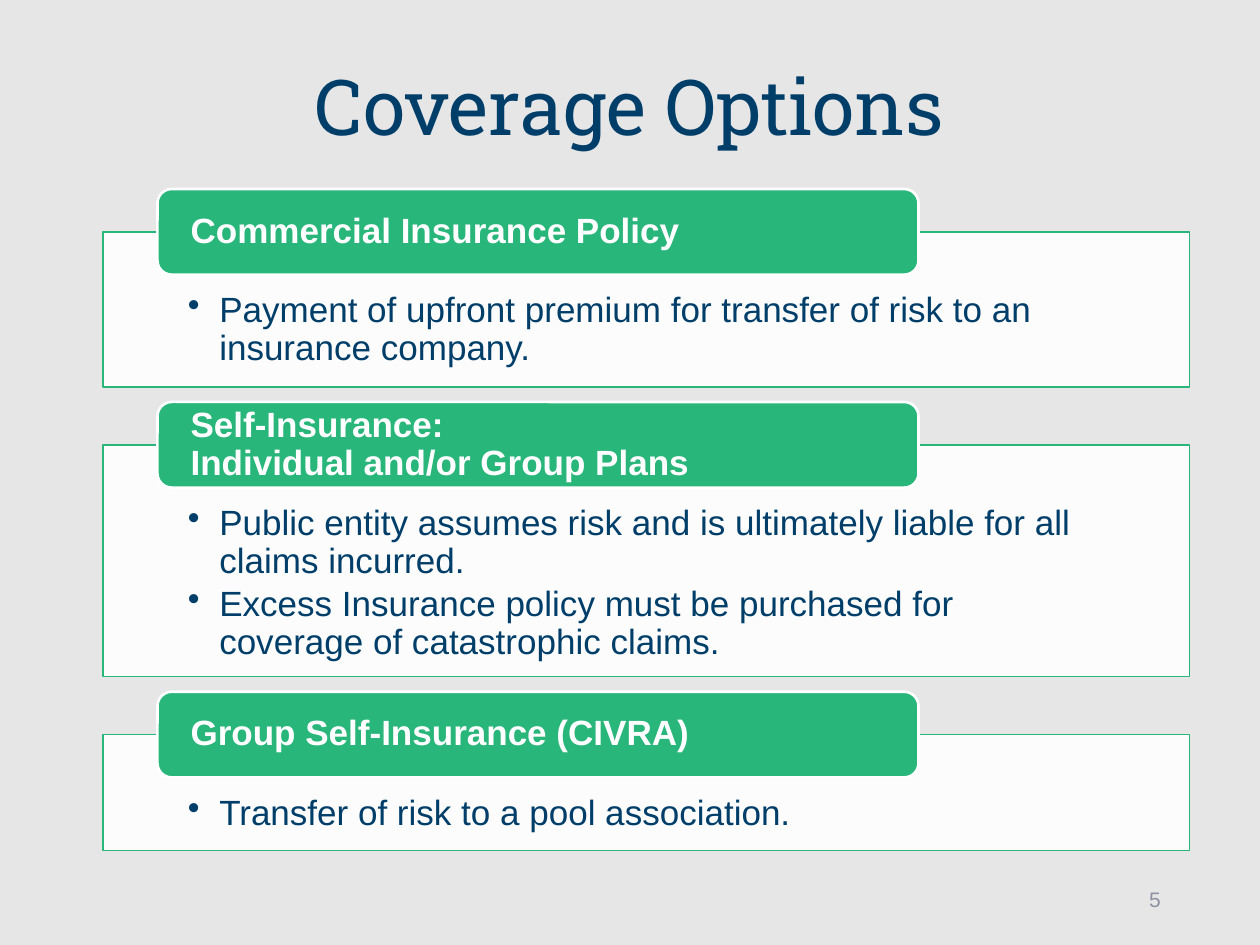
from dataclasses import dataclass

from lxml import etree
from pptx import Presentation
from pptx.dml.color import RGBColor
from pptx.enum.shapes import MSO_SHAPE
from pptx.enum.text import MSO_ANCHOR, PP_ALIGN
from pptx.oxml.ns import qn
from pptx.util import Inches, Pt

RECT = MSO_SHAPE.RECTANGLE
ROUND = MSO_SHAPE.ROUNDED_RECTANGLE
TOP = MSO_ANCHOR.TOP
MIDDLE = MSO_ANCHOR.MIDDLE
LEFT = PP_ALIGN.LEFT
CENTER = PP_ALIGN.CENTER
RIGHT = PP_ALIGN.RIGHT


@dataclass(frozen=True)
class Theme:
    back: str = "E7E6E6"
    navy: str = "003E6A"
    green: str = "28B67A"
    white: str = "FFFFFF"
    gray: str = "8C92A1"
    head: str = "Roboto Slab"
    body: str = "Arial"
    big: int = 44
    mid: int = 20
    small: int = 12


class Deck:
    def __init__(self, theme):
        self.theme = theme
        self.file = Presentation()
        self.file.slide_width = Inches(10)
        self.file.slide_height = Inches(7.5)
        self.slide = self.file.slides.add_slide(self.file.slide_layouts[5])
        fill = self.slide.background.fill
        fill.solid()
        fill.fore_color.rgb = RGBColor.from_string(theme.back)

    def frame(self, shape, anchor, pads):
        frame = shape.text_frame
        frame.word_wrap = True
        frame.vertical_anchor = anchor
        frame.margin_left, frame.margin_top, frame.margin_right, frame.margin_bottom = map(Inches, pads)
        return frame

    def label(self, para, text, size, color, align=LEFT, font=None, bold=False):
        para.alignment = align
        para.line_spacing = 0.9
        for i, line in enumerate(text.split("\n")):
            if i:
                para.add_line_break()
            run = para.add_run()
            run.text = line
            run.font.name = font or self.theme.body
            run.font.size = Pt(size)
            run.font.bold = bold
            run.font.color.rgb = RGBColor.from_string(color)

    def title(self, text):
        shape = self.slide.shapes.title
        shape.left, shape.top, shape.width, shape.height = map(Inches, (0.69, 0.15, 8.62, 1.45))
        frame = self.frame(shape, MIDDLE, (0.1, 0.05, 0.1, 0.05))
        self.label(frame.paragraphs[0], text, self.theme.big, self.theme.navy, CENTER, self.theme.head)

    def number(self, text):
        box = self.slide.shapes.add_textbox(*map(Inches, (7.06, 6.95, 2.25, 0.4)))
        frame = self.frame(box, MIDDLE, (0.1, 0.05, 0.1, 0.05))
        self.label(frame.paragraphs[0], text, self.theme.small, self.theme.gray, RIGHT)

    def shape(self, kind, place, fill, line, width):
        shape = self.slide.shapes.add_shape(kind, *map(Inches, place))
        shape.shadow.inherit = False
        shape.fill.solid()
        shape.fill.fore_color.rgb = RGBColor.from_string(fill)
        shape.line.color.rgb = RGBColor.from_string(line)
        shape.line.width = Pt(width)
        return shape

    def card(self, top, height, items):
        theme = self.theme
        shape = self.shape(RECT, (0.82, top, 8.62, height), theme.white, theme.green, 1)
        tint = shape._element.spPr.find(qn("a:solidFill"))[0]
        etree.SubElement(tint, qn("a:alpha"), val="90000")
        frame = self.frame(shape, TOP, (0.67, 0.48, 0.67, 0.16))
        for i, item in enumerate(items):
            para = frame.add_paragraph() if i else frame.paragraphs[0]
            props = para._p.get_or_add_pPr()
            props.set("marL", str(Inches(0.25)))
            props.set("indent", str(-Inches(0.25)))
            etree.SubElement(props, qn("a:buChar"), char="•")
            para.level = 1
            para.space_after = Pt(3)
            self.label(para, item, theme.mid, theme.navy)

    def badge(self, top, text):
        theme = self.theme
        shape = self.shape(ROUND, (1.25, top, 6.04, 0.68), theme.green, theme.white, 1.5)
        frame = self.frame(shape, MIDDLE, (0.23, 0, 0.23, 0))
        self.label(frame.paragraphs[0], text, theme.mid, theme.white, bold=True)


def main():
    deck = Deck(Theme())
    deck.title("Coverage Options")
    plans = [
        ("Commercial Insurance Policy", 1.23,
         ["Payment of upfront premium for transfer of risk to an insurance company."]),
        ("Self-Insurance:\nIndividual and/or Group Plans", 1.84,
         ["Public entity assumes risk and is ultimately liable for all claims incurred.",
          "Excess Insurance policy must be purchased for coverage of catastrophic claims."]),
        ("Group Self-Insurance (CIVRA)", 0.92,
         ["Transfer of risk to a pool association."]),
    ]
    top, drop, gap = 1.5, 0.34, 0.12
    for name, height, items in plans:
        deck.card(top + drop, height, items)
        deck.badge(top, name)
        top += drop + height + gap
    deck.number("5")
    deck.file.save("out.pptx")


if __name__ == "__main__":
    main()
